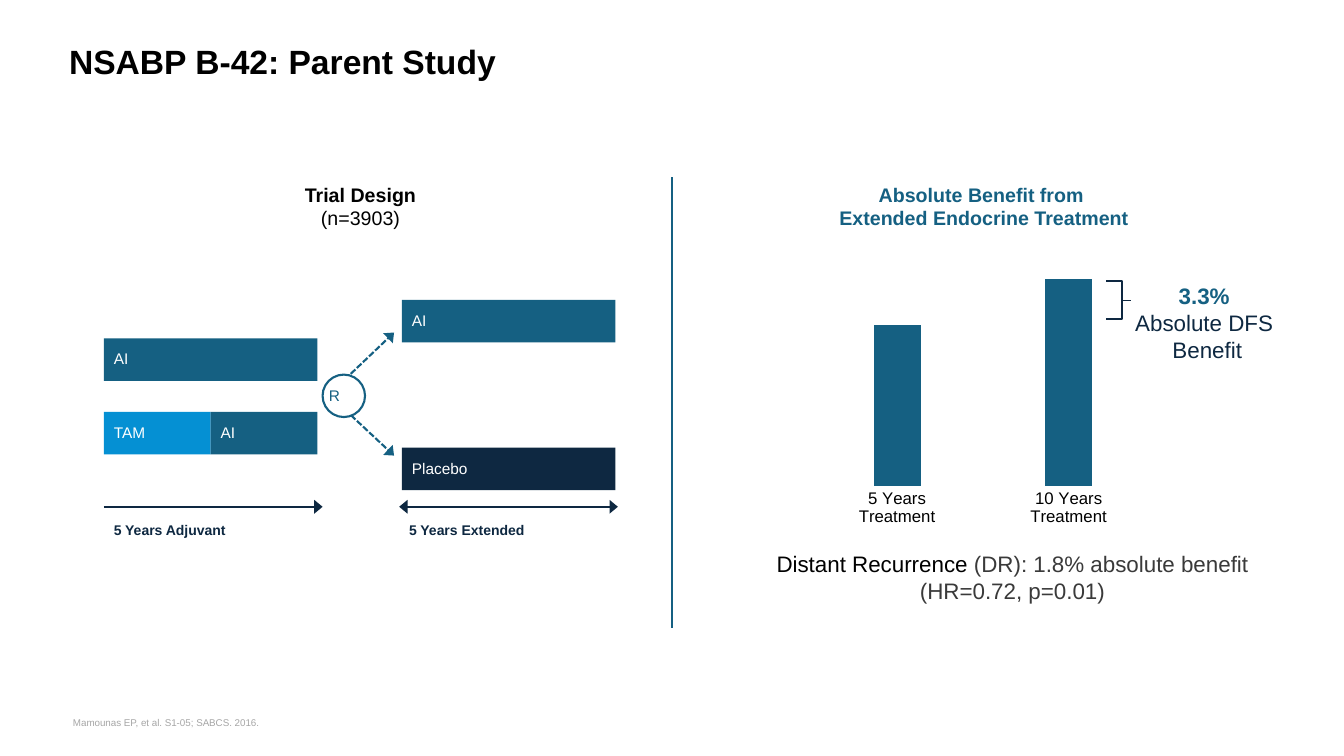
from lxml.etree import SubElement
from pptx import Presentation
from pptx.chart.data import CategoryChartData
from pptx.dml.color import RGBColor
from pptx.enum.chart import XL_CHART_TYPE, XL_TICK_MARK
from pptx.enum.dml import MSO_LINE
from pptx.enum.shapes import MSO_CONNECTOR, MSO_SHAPE
from pptx.enum.text import MSO_ANCHOR, MSO_AUTO_SIZE, PP_ALIGN
from pptx.oxml import parse_xml
from pptx.oxml.ns import nsdecls, qn
from pptx.util import Cm, Pt

TEAL = RGBColor(0x15, 0x60, 0x82)
NAVY = RGBColor(0x0E, 0x28, 0x41)
SKY = RGBColor(0x05, 0x90, 0xD3)
WHITE = RGBColor(0xFF, 0xFF, 0xFF)
BLACK = RGBColor(0, 0, 0)
DARK = RGBColor(0x3A, 0x3A, 0x3A)
GREY = RGBColor(0xA6, 0xA6, 0xA6)

BAR = 5.38
HIGH = 1.07


def style(font, size, color, bold=False, name="Arial"):
    font.name, font.size, font.bold = name, Pt(size), bold
    font.color.rgb = color


def write(frame, text, size, color, bold=False, align=PP_ALIGN.LEFT,
          anchor=MSO_ANCHOR.MIDDLE, space=None):
    frame.word_wrap = True
    frame.auto_size = MSO_AUTO_SIZE.NONE
    frame.vertical_anchor = anchor
    para = frame.paragraphs[0]
    para.text = text
    para.alignment = align
    if space:
        para.line_spacing = space
    style(para.font, size, color, bold)
    return para


def add_run(para, text, color, bold=False):
    run = para.add_run()
    run.text = text
    run.font.color.rgb = color
    run.font.bold = bold


def add_text(slide, x, y, w, h, text, size, color, **opts):
    box = slide.shapes.add_textbox(Cm(x), Cm(y), Cm(w), Cm(h))
    return write(box.text_frame, text, size, color, **opts)


def add_line(slide, x1, y1, x2, y2, color, width=1.5, dash=None, ends=()):
    line = slide.shapes.add_connector(
        MSO_CONNECTOR.STRAIGHT, Cm(x1), Cm(y1), Cm(x2), Cm(y2))
    line.line.color.rgb = color
    line.line.width = Pt(width)
    if dash:
        line.line.dash_style = dash
    for end in ends:
        SubElement(line.line._get_or_add_ln(), qn("a:" + end),
                   type="triangle", w="lg", len="med")
    SubElement(line._element.spPr, qn("a:effectLst"))


def add_block(slide, x, y, w, text, fill, color=WHITE, kind=MSO_SHAPE.RECTANGLE):
    block = slide.shapes.add_shape(kind, Cm(x), Cm(y), Cm(w), Cm(HIGH))
    block.shadow.inherit = False
    block.fill.solid()
    block.fill.fore_color.rgb = fill
    block.line.fill.background()
    write(block.text_frame, text, 11, color, space=0.95)
    return block


def add_title(slide, x, y, w, h):
    title = slide.shapes.title
    title.left, title.top, title.width, title.height = Cm(x), Cm(y), Cm(w), Cm(h)
    frame = title.text_frame
    frame.margin_left = frame.margin_right = 0
    write(frame, "NSABP B-42: Parent Study", 24, BLACK, bold=True, space=0.95)


def add_trial(slide, x, y):
    head = add_text(slide, x + 3.29, y - 0.01, 6.35, 1.45, "Trial Design", 14, BLACK,
                    bold=True, align=PP_ALIGN.CENTER, anchor=MSO_ANCHOR.BOTTOM)
    frame = slide.shapes[-1].text_frame
    count = frame.add_paragraph()
    count.text = "(n=3903)"
    count.alignment = head.alignment
    style(count.font, 14, BLACK)

    for dx, dy, w, text, fill in (
            (0, 4.06, BAR, "AI", TEAL),
            (0, 5.91, BAR / 2, "TAM", SKY),
            (BAR / 2, 5.91, BAR / 2, "AI", TEAL),
            (7.51, 3.09, BAR, "AI", TEAL),
            (7.51, 6.81, BAR, "Placebo", NAVY)):
        add_block(slide, x + dx, y + dy, w, text, fill)

    for y1, y2 in ((4.95, 3.91), (5.99, 7.01)):
        add_line(slide, x + 6.22, y + y1, x + 7.31, y + y2, TEAL,
                 dash=MSO_LINE.SQUARE_DOT, ends=("tailEnd",))
    ring = add_block(slide, x + 5.51, y + 4.97, HIGH, "R", WHITE, TEAL, MSO_SHAPE.OVAL)
    ring.line.color.rgb = TEAL
    ring.line.width = Pt(1.5)
    frame = ring.text_frame
    frame.margin_left = frame.margin_right = frame.margin_top = frame.margin_bottom = 0

    for dx, text, ends in ((0, "5 Years Adjuvant", ("tailEnd",)),
                           (7.44, "5 Years Extended", ("headEnd", "tailEnd"))):
        add_line(slide, x + dx, y + 8.3, x + dx + 5.51, y + 8.3, NAVY, ends=ends)
        add_text(slide, x + dx, y + 8.33, 5.5, 1.12, text, 10, NAVY, bold=True)


def add_bars(slide, x, y, w, h):
    data = CategoryChartData()
    data.categories = ["5 Years\nTreatment", "10 Years\nTreatment"]
    data.add_series("Series 1", (96, 100))
    chart = slide.shapes.add_chart(
        XL_CHART_TYPE.COLUMN_CLUSTERED, Cm(x), Cm(y), Cm(w), Cm(h), data).chart
    chart.has_legend = chart.has_title = False
    style(chart.font, 11, BLACK, name="Karla")
    plot = chart.plots[0]
    plot.gap_width, plot.overlap = 264, -27
    plot.vary_by_categories = False
    fill = plot.series[0].format.fill
    fill.solid()
    fill.fore_color.rgb = TEAL
    cats = chart.category_axis
    cats.major_tick_mark = XL_TICK_MARK.NONE
    cats.format.line.fill.background()
    style(cats.tick_labels.font, 12, BLACK)
    vals = chart.value_axis
    vals.minimum_scale, vals.maximum_scale = 82, 100
    vals.has_major_gridlines = False
    vals.tick_labels.number_format = "0.0%"
    vals.tick_labels.number_format_is_linked = False
    vals.visible = False

    area = chart._chartSpace.chart.plotArea
    for old in area.findall(qn("c:layout")):
        area.remove(old)
    sizes = "".join(f'<c:{tag} val="{val}"/>' for tag, val in (
        ("layoutTarget", "inner"), ("xMode", "edge"), ("yMode", "edge"),
        ("x", 0.04), ("y", 0.09), ("w", 0.92), ("h", 0.71)))
    area.insert(0, parse_xml(
        f'<c:layout {nsdecls("c")}><c:manualLayout>{sizes}</c:manualLayout></c:layout>'))


def add_gain(slide, x, y):
    pen = slide.shapes.build_freeform(Cm(x), Cm(y))
    pen.add_line_segments(
        [(Cm(x + dx), Cm(y + dy)) for dx, dy in ((0.39, 0), (0.39, 0.95), (0, 0.95))],
        close=False)
    brace = pen.convert_to_shape()
    brace.shadow.inherit = False
    brace.fill.background()
    brace.line.color.rgb = NAVY
    brace.line.width = Pt(1.25)
    add_line(slide, x + 0.39, y + 0.48, x + 0.62, y + 0.48, NAVY, width=1)
    para = add_text(slide, x + 0.45, y - 0.12, 4.19, 2.31, "", 16, NAVY,
                    align=PP_ALIGN.CENTER)
    add_run(para, "3.3% ", TEAL, True)
    for text in ("Absolute DFS ", "Benefit"):
        para.add_line_break()
        add_run(para, text, NAVY)


def add_result(slide, x, y):
    add_text(slide, x + 0.54, y - 0.01, 11.18, 1.45,
             "Absolute Benefit from \vExtended Endocrine Treatment", 14, TEAL,
             bold=True, align=PP_ALIGN.CENTER, anchor=MSO_ANCHOR.BOTTOM)
    add_bars(slide, x + 1.4, y + 1.89, 9.4, 7.37)
    add_gain(slide, x + 9.21, y + 2.62)
    para = add_text(slide, x + 0.01, y + 9.27, 13.67, 1.63, "", 16, BLACK,
                    align=PP_ALIGN.CENTER, anchor=MSO_ANCHOR.TOP)
    add_run(para, "Distant Recurrence ", BLACK)
    add_run(para, "(DR): 1.8% absolute benefit (HR=0.72, p=0.01)", DARK)


def main():
    deck = Presentation()
    deck.slide_width, deck.slide_height = Cm(33.87), Cm(19.05)
    slide = deck.slides.add_slide(deck.slide_layouts[5])
    add_title(slide, 1.74, 1.04, 16.3, 1.09)
    add_line(slide, 16.94, 4.47, 16.94, 15.82, TEAL)
    add_trial(slide, 2.62, 4.47)
    add_result(slide, 18.67, 4.47)
    add_text(slide, 1.59, 17.96, 32.21, 0.48, "Mamounas EP, et al. S1-05; SABCS. 2016.",
             7, GREY, anchor=MSO_ANCHOR.TOP, space=0.9)
    deck.save("out.pptx")


if __name__ == "__main__":
    main()
